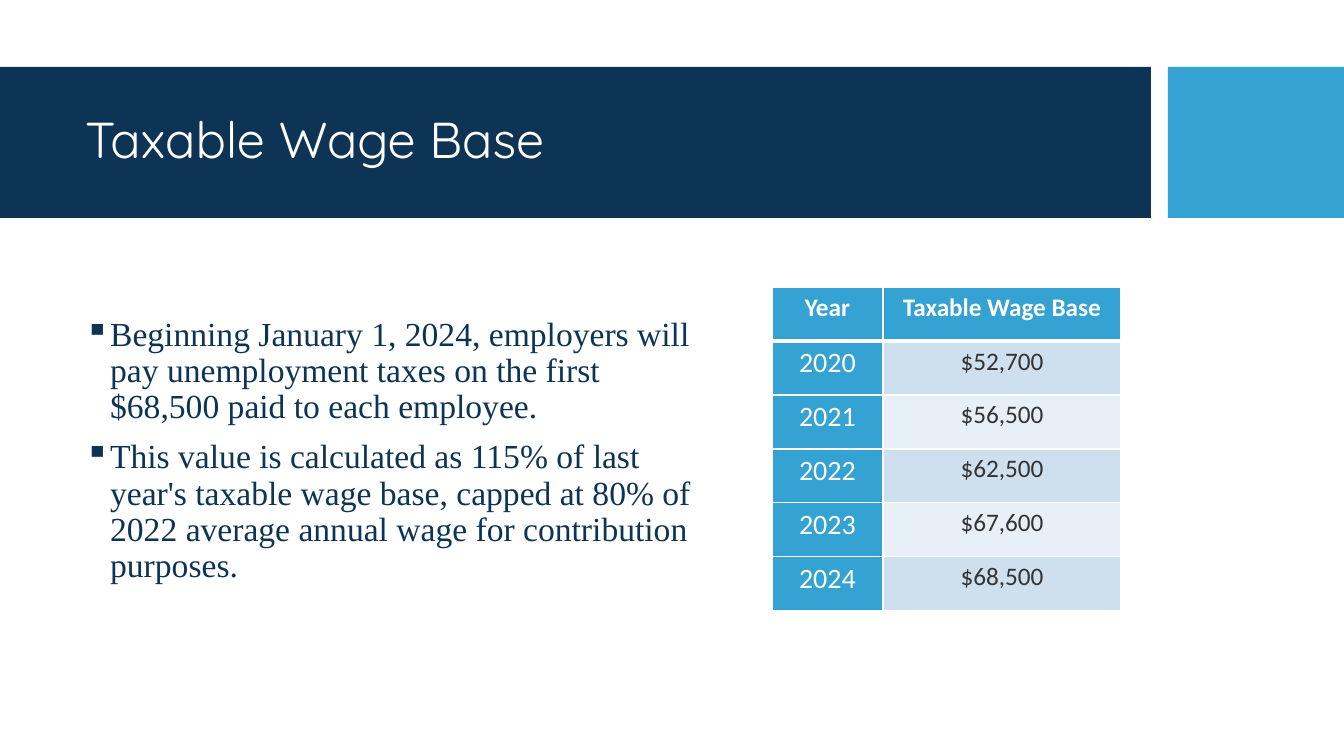
from lxml.etree import SubElement
from pptx import Presentation
from pptx.dml.color import RGBColor
from pptx.enum.shapes import MSO_SHAPE
from pptx.enum.text import MSO_ANCHOR, PP_ALIGN
from pptx.oxml.ns import qn
from pptx.util import Inches, Pt

SCALE = Inches(1) / 100.8
NAVY, BLUE, WHITE, GRAY = "0D3455", "34A2D2", "FFFFFF", "333333"
BANDS = ("CEE0EE", "E8F0F7")
POINTS = (
    "Beginning January 1, 2024, employers will pay unemployment taxes "
    "on the first $68,500 paid to each employee.",
    "This value is calculated as 115% of last year's\u00a0taxable wage base, "
    "capped at 80% of 2022 average annual wage for contribution purposes.",
)
WAGES = (
    ("Year", "Taxable Wage Base"),
    ("2020", "$52,700"),
    ("2021", "$56,500"),
    ("2022", "$62,500"),
    ("2023", "$67,600"),
    ("2024", "$68,500"),
)


def px(count):
    """Turn pixels into EMU."""
    return round(count * SCALE)


def paint(target, color):
    """Give a fill or cell one solid colour."""
    target.fill.solid()
    target.fill.fore_color.rgb = RGBColor.from_string(color)


def style(para, name, size, color, bold=False):
    """Set the font of a whole paragraph."""
    font = para.font
    font.name, font.size, font.bold = name, Pt(size), bold
    font.color.rgb = RGBColor.from_string(color)


def add_bar(slide, left, top, width, height, color):
    """Add a plain filled rectangle."""
    bar = slide.shapes.add_shape(
        MSO_SHAPE.RECTANGLE, px(left), px(top), px(width), px(height))
    bar.shadow.inherit = False
    paint(bar, color)
    bar.line.fill.background()


def add_header(slide, left, top, width, height):
    """Draw the two bars of the header and set the title on them."""
    gap, block = 17, 176
    main = width - block - gap
    add_bar(slide, left, top, main, height, NAVY)
    add_bar(slide, left + main + gap, top, block, height, BLUE)
    title = slide.shapes.title
    slide.shapes._spTree.append(title._element)
    title.left, title.top = px(left + 75), px(top + 16)
    title.width, title.height = px(main - 91), px(height - 32)
    frame = title.text_frame
    frame.text = "Taxable Wage Base"
    frame.vertical_anchor = MSO_ANCHOR.MIDDLE
    para = frame.paragraphs[0]
    para.alignment = PP_ALIGN.LEFT
    para.line_spacing = 0.9
    style(para, "Quicksand", 36, WHITE)


def add_points(slide, left, top, width, height):
    """Add the bulleted text."""
    box = slide.shapes.add_textbox(px(left), px(top), px(width), px(height))
    frame = box.text_frame
    frame.word_wrap = True
    for index, text in enumerate(POINTS):
        para = frame.add_paragraph() if index else frame.paragraphs[0]
        para.text = text
        para.line_spacing = 0.9
        para.space_before = Pt(10 if index else 0)
        props = para._p.get_or_add_pPr()
        props.set("marL", str(Inches(0.25)))
        props.set("indent", str(-Inches(0.25)))
        SubElement(props, qn("a:buChar"), char="▪")
        style(para, "Times New Roman", 24, NAVY)


def add_edges(cell, head):
    """Draw white cell borders, thick below the head row and thin elsewhere."""
    props = cell._tc.get_or_add_tcPr()
    for side in "LRTB":
        width = Pt(3 if head and side == "B" else 1)
        line = SubElement(props, qn(f"a:ln{side}"), w=str(width))
        fill = SubElement(line, qn("a:solidFill"))
        SubElement(fill, qn("a:srgbClr"), val=WHITE)


def add_wages(slide, left, top, width, height):
    """Add the table of wage bases by year."""
    first = 111
    table = slide.shapes.add_table(
        len(WAGES), 2, px(left), px(top), px(width), px(height)).table
    table.columns[0].width = px(first)
    table.columns[1].width = px(width - first)
    for row, values in enumerate(WAGES):
        for col, text in enumerate(values):
            cell = table.cell(row, col)
            head = row == 0
            label = head or col == 0
            cell.text = text
            add_edges(cell, head)
            paint(cell, BLUE if label else BANDS[(row - 1) % 2])
            para = cell.text_frame.paragraphs[0]
            para.alignment = PP_ALIGN.CENTER
            size = 20 if label and not head else 18
            style(para, "Calibri", size, WHITE if label else GRAY, head)


def main():
    """Build and save the slide."""
    deck = Presentation()
    deck.slide_width, deck.slide_height = px(1344), px(756)
    slide = deck.slides.add_slide(deck.slide_layouts[5])
    add_header(slide, 0, 67, 1344, 151)
    add_points(slide, 75, 312, 638, 385)
    add_wages(slide, 772, 287, 349, 324)
    deck.save("out.pptx")


if __name__ == "__main__":
    main()
